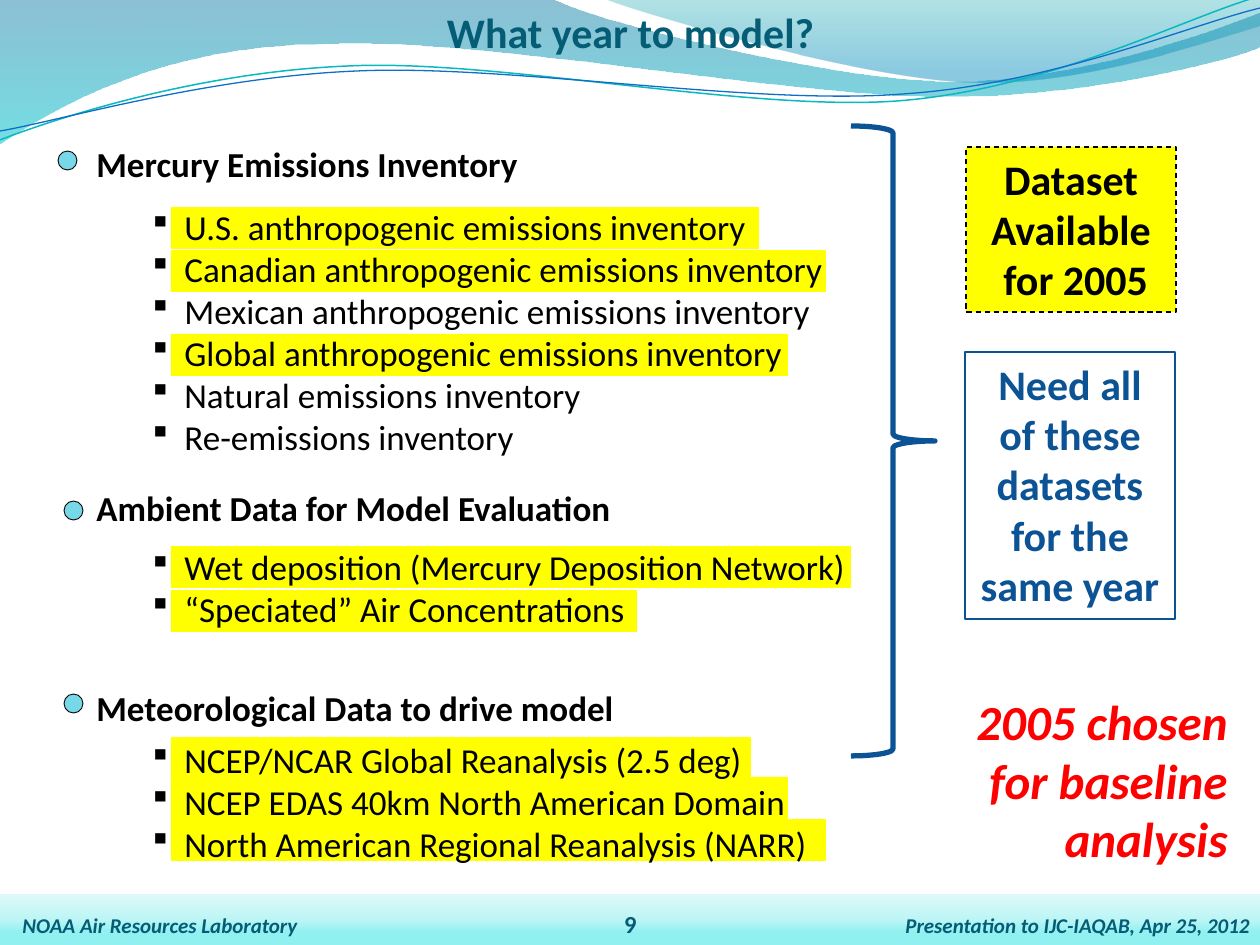
import dataclasses
import math
import typing

import lxml.etree
import pptx
import pptx.dml.color
import pptx.enum.dml
import pptx.enum.shapes
import pptx.enum.text
import pptx.oxml
import pptx.oxml.ns
import pptx.util

SCALE = 914400 / 126
FONT = "Calibri"
TEAL, BLUE, BLACK, RED, YELLOW = "045C75", "0B5394", "000000", "FF0000", "FFFF00"
ALIGN = pptx.enum.text.PP_ALIGN
SHAPE = pptx.enum.shapes.MSO_SHAPE
TILT = 357.3
Point = tuple[float, float]


class Frame(typing.NamedTuple):
    left: int
    top: int
    width: int
    height: int


class Stop(typing.NamedTuple):
    position: int
    color: str
    opacity: int = 100


@dataclasses.dataclass(frozen=True)
class Style:
    size: int
    color: str = BLACK
    bold: bool = True
    italic: bool = False
    align: typing.Any = ALIGN.LEFT
    bullet: str = ""


@dataclasses.dataclass(frozen=True)
class Label:
    frame: Frame
    lines: tuple[str, ...]
    style: Style
    wrap: bool = True


@dataclasses.dataclass(frozen=True)
class Section:
    heading: Label
    dot: Point
    items: Label
    highlights: tuple[tuple[int, int], ...]


HEADING = Style(20)
ITEM = Style(20, bold=False, bullet="§")
FOOTER = Style(12, TEAL, italic=True)
CALLOUT = Style(24, align=ALIGN.CENTER)
NEED = Style(24, BLUE, align=ALIGN.CENTER)
TITLE = Style(24, TEAL, align=ALIGN.CENTER)

SECTIONS = (
    Section(
        Label(Frame(84, 136, 557, 55), ("Mercury Emissions Inventory",), HEADING),
        (58, 151),
        Label(Frame(140, 199, 702, 267), (
            "U.S. anthropogenic emissions inventory",
            "Canadian anthropogenic emissions inventory",
            "Mexican anthropogenic emissions inventory",
            "Global anthropogenic emissions inventory",
            "Natural emissions inventory",
            "Re-emissions inventory",
        ), ITEM, False),
        ((207, 588), (250, 655), (334, 617)),
    ),
    Section(
        Label(Frame(84, 480, 840, 55), ("Ambient Data for Model Evaluation",), HEADING),
        (64, 501),
        Label(Frame(140, 539, 725, 97), (
            "Wet deposition (Mercury Deposition Network)",
            "“Speciated” Air Concentrations",
        ), ITEM, False),
        ((546, 680), (590, 466)),
    ),
    Section(
        Label(Frame(84, 680, 557, 55), ("Meteorological Data to drive model",), HEADING),
        (64, 694),
        Label(Frame(140, 732, 687, 140), (
            "NCEP/NCAR Global Reanalysis (2.5 deg)",
            "NCEP EDAS 40km North American Domain",
            "North American Regional Reanalysis (NARR)",
        ), ITEM, False),
        ((737, 580), (777, 617), (819, 655)),
    ),
)
LABELS = (
    Label(Frame(935, 685, 305, 190), ("2005 chosen for baseline analysis",),
          Style(28, RED, italic=True, align=ALIGN.RIGHT)),
    Label(Frame(893, 906, 375, 38), ("Presentation to IJC-IAQAB, Apr 25, 2012",), FOOTER, False),
    Label(Frame(10, 906, 307, 38), ("NOAA Air Resources Laboratory",), FOOTER, False),
    Label(Frame(599, 903, 63, 43), ("9",), Style(14, TEAL, align=ALIGN.CENTER)),
)
WAVES = (
    ([[(0, 0)], [(554, 0)], [(600, 23), (837, 81), (955, 81)],
      [(1075, 81), (1207, 33), (1260, 13)], [(1261, 47)],
      [(1239, 57), (1096, 97), (940, 96)], [(784, 96), (481, 37), (324, 44)],
      [(163, 45), (58, 106), (-1, 144)]],
     (Stop(0, "0074A1", 45), Stop(100, "00C6CF", 55))),
    ([[(604, -1)], [(641, 14), (859, 78), (969, 82)],
      [(1079, 87), (1211, 40), (1260, 26)], [(1260, 0)]],
     (Stop(0, "00A1A9", 30), Stop(80, "008BBF", 45))),
)
STRANDS = (
    ([[(0, 140)], [(60, 117), (199, 72), (349, 66)], [(498, 59), (747, 112), (898, 101)],
      [(1050, 89), (1182, 19), (1257, -3)]], (629, 72), "0AB8BF", 0.85),
    ([[(0, 131)], [(59, 121), (207, 77), (357, 71)], [(508, 64), (752, 106), (903, 94)],
      [(1053, 84), (1186, 26), (1260, 8)]], (629, 74), "0F6FC6", 0.75),
)


def px(length: float) -> int:
    return round(length * SCALE)


def rgb(color: str) -> pptx.dml.color.RGBColor:
    return pptx.dml.color.RGBColor.from_string(color)


def paint(shape, fill: str = "", line: str = "", weight: float = 0.75) -> None:
    shape.shadow.inherit = False
    if fill:
        shape.fill.solid()
        shape.fill.fore_color.rgb = rgb(fill)
    else:
        shape.fill.background()
    if line:
        shape.line.color.rgb = rgb(line)
        shape.line.width = pptx.util.Pt(weight)
    else:
        shape.line.fill.background()


def shade(shape, stops: typing.Sequence[Stop], angle: int) -> None:
    qn = pptx.oxml.ns.qn
    shape.fill.gradient()
    shape.fill.gradient_angle = angle
    stop_list = shape._element.spPr.find(qn("a:gradFill")).find(qn("a:gsLst"))
    for child in list(stop_list):
        stop_list.remove(child)
    for stop in stops:
        stop_list.append(pptx.oxml.parse_xml(
            f'<a:gs {pptx.oxml.ns.nsdecls("a")} pos="{stop.position * 1000}">'
            f'<a:srgbClr val="{stop.color}"><a:alpha val="{stop.opacity * 1000}"/>'
            "</a:srgbClr></a:gs>"))


def add_figure(page, kind, frame: Frame, fill: str = "", line: str = "", weight: float = 0.75):
    shape = page.shapes.add_shape(kind, *map(px, frame))
    paint(shape, fill, line, weight)
    return shape


def add_curve(page, route: list[list[Point]], closed: bool):
    qn = pptx.oxml.ns.qn
    points = [(px(x), px(y)) for segment in route for x, y in segment]
    builder = page.shapes.build_freeform(*points[0], scale=1.0)
    builder.add_line_segments(points[1:], close=closed)
    shape = builder.convert_to_shape()
    edges = iter(list(shape._element.spPr.iter(qn("a:lnTo"))))
    for segment in route[1:]:
        group = [next(edges) for _ in segment]
        if len(group) == 3:
            curve = lxml.etree.Element(qn("a:cubicBezTo"))
            group[0].addprevious(curve)
            for edge in group:
                curve.append(edge[0])
                edge.getparent().remove(edge)
    return shape


def turn(point: Point, center: Point, degrees: float) -> Point:
    angle = math.radians(degrees)
    x, y = point[0] - center[0], point[1] - center[1]
    return (center[0] + x * math.cos(angle) - y * math.sin(angle),
            center[1] + x * math.sin(angle) + y * math.cos(angle))


def write(shape, lines: typing.Sequence[str], style: Style, wrap: bool = True) -> None:
    frame = shape.text_frame
    frame.word_wrap = wrap
    frame.auto_size = pptx.enum.text.MSO_AUTO_SIZE.SHAPE_TO_FIT_TEXT
    frame.vertical_anchor = pptx.enum.text.MSO_ANCHOR.TOP
    for index, line in enumerate(lines):
        para = frame.add_paragraph() if index else frame.paragraphs[0]
        para.alignment = style.align
        if style.bullet:
            properties = para._p.get_or_add_pPr()
            properties.set("marL", str(px(32)))
            properties.set("indent", str(-px(32)))
            for tag, name, value in (("buFont", "typeface", "Wingdings"),
                                     ("buChar", "char", style.bullet)):
                mark = lxml.etree.SubElement(properties, pptx.oxml.ns.qn(f"a:{tag}"))
                mark.set(name, value)
        span = para.add_run()
        span.text = line
        span.font.name = FONT
        span.font.size = pptx.util.Pt(style.size)
        span.font.bold = style.bold
        span.font.italic = style.italic
        span.font.color.rgb = rgb(style.color)


def add_label(page, label: Label) -> None:
    box = page.shapes.add_textbox(*map(px, label.frame))
    write(box, label.lines, label.style, label.wrap)


def add_backdrop(page) -> None:
    band = add_figure(page, SHAPE.RECTANGLE, Frame(0, 894, 1260, 51))
    shade(band, (Stop(25, "91F1F1"), Stop(50, "BDF5F5"), Stop(100, "DFF9F9")), 90)
    for route, stops in WAVES:
        wave = add_curve(page, route, True)
        paint(wave)
        shade(wave, stops, 270)
    group = page.shapes.add_group_shape()
    for route, center, color, weight in STRANDS:
        level = [[turn(point, center, -TILT) for point in segment] for segment in route]
        strand = add_curve(group, level, False)
        strand.rotation = TILT
        paint(strand, line=color, weight=weight)


def add_title(page, text: str) -> None:
    title = page.shapes.title
    title._element.getparent().append(title._element)
    title.left, title.top, title.width, title.height = map(px, Frame(369, 0, 523, 63))
    write(title, (text,), TITLE)


def add_availability(page) -> None:
    group = page.shapes.add_group_shape()
    for section in SECTIONS:
        for top, width in section.highlights:
            add_figure(group, SHAPE.RECTANGLE, Frame(171, top, width, 42), YELLOW)
    box = add_figure(group, SHAPE.RECTANGLE, Frame(966, 147, 210, 165), YELLOW, BLACK)
    box.line.dash_style = pptx.enum.dml.MSO_LINE.DASH
    write(box, ("Dataset Available", " for 2005"), CALLOUT)


def main() -> None:
    deck = pptx.Presentation()
    deck.slide_width, deck.slide_height = px(1260), px(945)
    page = deck.slides.add_slide(deck.slide_layouts[5])
    add_backdrop(page)
    add_title(page, "What year to model?")
    for section in SECTIONS:
        add_label(page, section.heading)
        add_figure(page, SHAPE.OVAL, Frame(*section.dot, 19, 19), "77D9E8", BLACK, 0.5)
    add_figure(page, SHAPE.RIGHT_BRACE, Frame(851, 126, 84, 630), line=BLUE, weight=3)
    need = add_figure(page, SHAPE.RECTANGLE, Frame(965, 352, 210, 267), line=BLUE)
    write(need, ("Need all of these datasets for the same year",), NEED)
    add_availability(page)
    for label in (*(section.items for section in SECTIONS), *LABELS):
        add_label(page, label)
    deck.save("out.pptx")


if __name__ == "__main__":
    main()
